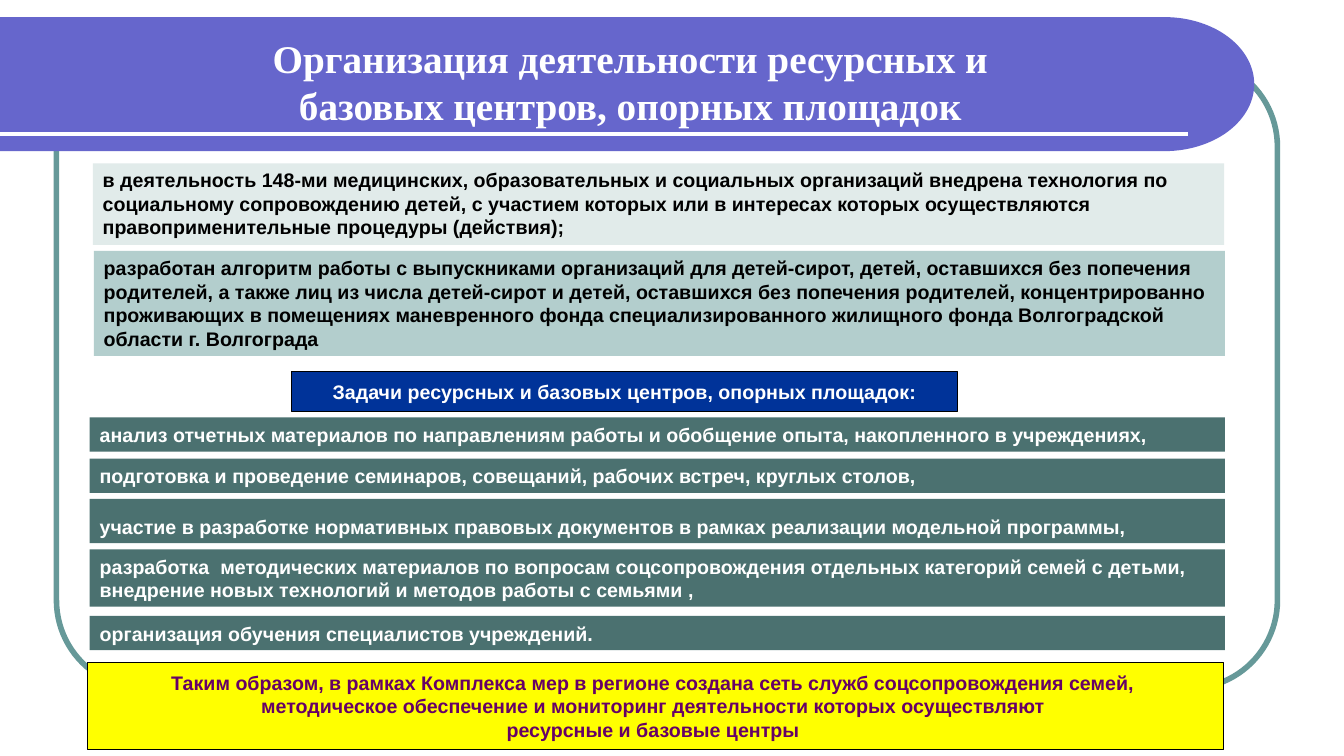
import math
from lxml import etree
from pptx import Presentation
from pptx import util as u
from pptx.dml.color import RGBColor
from pptx.enum import shapes, text
from pptx.oxml.ns import qn

WHITE = RGBColor(0xFF, 0xFF, 0xFF)
BLACK = RGBColor(0, 0, 0)
VIOLET = RGBColor(0x66, 0x66, 0xCC)
TEAL = RGBColor(0x66, 0x99, 0x99)
DEEP = RGBColor(0x4B, 0x71, 0x70)
PALE = RGBColor(0xE1, 0xEB, 0xEA)
MIST = RGBColor(0xB3, 0xCE, 0xCD)
NAVY = RGBColor(0, 0x33, 0x99)
YELLOW = RGBColor(0xFF, 0xFF, 0)
PLUM = RGBColor(0x66, 0, 0x66)

TITLE = "Организация деятельности ресурсных и базовых центров, опорных площадок"
RESULTS = [
    ((0.92, 1.62, 11.22, 0.81), PALE,
     "в деятельность 148-ми медицинских, образовательных и социальных организаций "
     "внедрена технология по социальному сопровождению детей, с участием которых или "
     "в интересах которых осуществляются правоприменительные процедуры (действия);"),
    ((0.93, 2.49, 11.22, 1.04), MIST,
     "разработан алгоритм работы с выпускниками организаций для детей-сирот, детей, "
     "оставшихся без попечения родителей, а также лиц из числа детей-сирот и детей, "
     "оставшихся без попечения родителей, концентрированно проживающих в помещениях "
     "маневренного фонда специализированного жилищного фонда Волгоградской области "
     "г. Волгограда"),
]
HEAD = "Задачи ресурсных и базовых центров, опорных площадок:"
TASKS = [
    (4.14, 0.34, "анализ отчетных материалов по направлениям работы и обобщение опыта, "
                 "накопленного в учреждениях,"),
    (4.55, 0.34, "подготовка и проведение семинаров, совещаний, рабочих встреч, "
                 "круглых столов,"),
    (4.95, 0.44, "участие в разработке нормативных правовых документов в рамках "
                 "реализации модельной программы,"),
    (5.45, 0.57, "разработка  методических материалов по вопросам соцсопровождения "
                 "отдельных категорий семей с детьми, внедрение новых технологий и "
                 "методов работы с семьями ,"),
    (6.11, 0.34, "организация обучения специалистов учреждений."),
]
SUMMARY = (
    "Таким образом, в рамках Комплекса мер в регионе создана сеть служб "
    "соцсопровождения семей, \n"
    "методическое обеспечение и мониторинг деятельности которых осуществляют \n"
    "ресурсные и базовые центры "
)


class Deck:
    """Holds the text style and the current slide, and draws its elements."""

    def __init__(self, slide, font="Arial", size=14):
        self.slide = slide
        self.font = font
        self.size = size

    def letter(self, frame, words, color, align, anchor, font=None, size=None):
        frame.text = words
        frame.vertical_anchor = anchor
        for para in frame.paragraphs:
            para.alignment = align
            for run in para.runs:
                run.font.name = font or self.font
                run.font.size = u.Pt(size or self.size)
                run.font.bold = True
                run.font.color.rgb = color

    def title(self, box, words):
        shape = self.slide.shapes.title
        shape.left, shape.top, shape.width, shape.height = map(u.Inches, box)
        self.letter(shape.text_frame, words, WHITE, text.PP_ALIGN.CENTER,
                    text.MSO_ANCHOR.MIDDLE, "Times New Roman", 28)
        shape.text_frame.word_wrap = True
        tree = shape._element.getparent()
        tree.append(shape._element)

    def frame(self, box, color, width, bend):
        shape = self.slide.shapes.add_shape(
            shapes.MSO_SHAPE.ROUNDED_RECTANGLE, *map(u.Inches, box))
        shape.adjustments[0] = bend
        shape.shadow.inherit = False
        shape.fill.background()
        shape.line.color.rgb = color
        shape.line.width = u.Pt(width)

    def band(self, top, base, bend, right, color):
        mid, half = (top + base) / 2, (base - top) / 2
        turns = [math.radians(a) for a in range(-90, 91, 3)]
        arc = [(u.Inches(bend + (right - bend) * math.cos(t)),
                u.Inches(mid + half * math.sin(t))) for t in turns]
        edge = self.slide.shapes.build_freeform(0, u.Inches(top))
        edge.add_line_segments(arc + [(0, u.Inches(base))], close=True)
        shape = edge.convert_to_shape()
        shape.shadow.inherit = False
        shape.fill.solid()
        shape.fill.fore_color.rgb = color
        shape.line.fill.background()

    def rule(self, start, end, color, width):
        line = self.slide.shapes.add_connector(
            shapes.MSO_CONNECTOR.STRAIGHT, *map(u.Inches, start + end))
        line.line.color.rgb = color
        line.line.width = u.Pt(width)
        etree.SubElement(line._element.spPr, qn("a:effectLst"))

    def panel(self, box, fill, words, color, anchor=text.MSO_ANCHOR.TOP):
        shape = self.slide.shapes.add_shape(
            shapes.MSO_SHAPE.RECTANGLE, *map(u.Inches, box))
        shape.shadow.inherit = False
        shape.fill.solid()
        shape.fill.fore_color.rgb = fill
        shape.line.fill.background()
        self.letter(shape.text_frame, words, color, text.PP_ALIGN.LEFT, anchor)
        shape.text_frame.word_wrap = True
        return shape

    def label(self, box, fill, words, color):
        shape = self.panel(box, fill, words, color, text.MSO_ANCHOR.MIDDLE)
        shape.line.color.rgb = BLACK
        shape.line.width = u.Pt(0.75)
        shape.text_frame.word_wrap = False
        for para in shape.text_frame.paragraphs:
            para.alignment = text.PP_ALIGN.CENTER


def main():
    show = Presentation()
    show.slide_width, show.slide_height = u.Inches(13.33), u.Inches(7.5)
    deck = Deck(show.slides.add_slide(show.slide_layouts[5]))
    deck.frame((0.56, 0.58, 12.11, 6.25), TEAL, 4, 0.14)
    deck.band(0.17, 1.5, 11.55, 12.44, VIOLET)
    deck.rule((0, 1.33), (11.78, 1.33), WHITE, 3)
    deck.title((1.86, 0.36, 8.78, 0.89), TITLE)
    for box, fill, words in RESULTS:
        deck.panel(box, fill, words, BLACK)
    deck.label((2.89, 3.69, 6.61, 0.39), NAVY, HEAD, WHITE)
    for top, height, words in TASKS:
        deck.panel((0.89, top, 11.26, height), DEEP, words, WHITE,
                   text.MSO_ANCHOR.BOTTOM)
    deck.label((0.87, 6.57, 11.27, 0.87), YELLOW, SUMMARY, PLUM)
    show.save("out.pptx")


if __name__ == "__main__":
    main()
